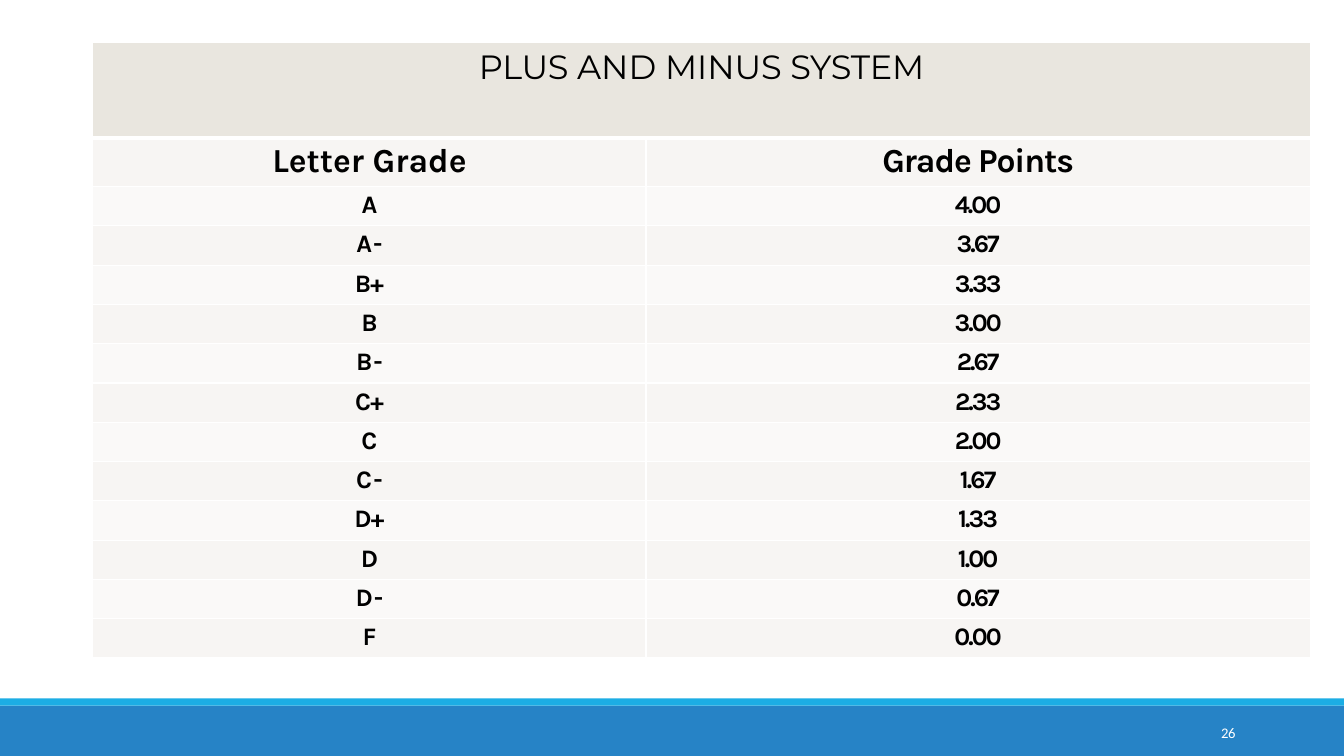
"""Build the slide that lists letter grades and their grade points."""
from lxml.etree import SubElement
from pptx import Presentation
from pptx.dml.color import RGBColor
from pptx.enum.shapes import MSO_SHAPE
from pptx.enum.text import MSO_ANCHOR, PP_ALIGN
from pptx.oxml.ns import qn
from pptx.util import Cm, Pt

TITLE = [("PLUS ", -0.2), ("AND MINUS", 0), (" SYSTEM", -0.2)]
HEADINGS = [
    [("L", -0.2), ("et", 0), ("t", -0.2), ("er ", 0), ("G", -0.1), ("r", -0.2), ("ade", 0)],
    [("Grade Points", -0.8)],
]
GRADES = [
    ("A", "4.00"), ("A-", "3.67"), ("B+", "3.33"), ("B", "3.00"),
    ("B-", "2.67"), ("C+", "2.33"), ("C", "2.00"), ("C-", "1.67"),
    ("D+", "1.33"), ("D", "1.00"), ("D-", "0.67"), ("F", "0.00"),
]
PAGE_NUMBER = "26"
SIGN_SPACING = {"+": -0.5, "-": 0.8}
POINTS_SPACING = -1.4

THEME = {
    "title": {"name": "Montserrat", "size": Pt(24), "bold": False, "color": "000000"},
    "heading": {"name": "Karla", "size": Pt(24), "bold": True, "color": "000000"},
    "grade": {"name": "Karla", "size": Pt(18), "bold": True, "color": "000000"},
    "number": {"name": "Calibri", "size": Pt(10.5), "bold": False, "color": "FFFFFF"},
    "title_fill": "E9E6DF",
    "bands": ("F7F5F3", "FAF9F8"),
    "rule": "FFFFFF",
    "footer": "2683C6",
    "stripe": "1CADE4",
}

PAGE_WIDTH, PAGE_HEIGHT = 33.87, 19.05
FOOTER_HEIGHT, STRIPE_HEIGHT = 1.27, 0.18
TABLE_LEFT, TABLE_TOP = 2.34, 1.07
COLUMN_WIDTHS = (13.94, 16.74)
ROW_HEIGHTS = [2.41, 1.22] + [0.99] * len(GRADES)


def write(frame, spans, style, align, space_before):
    """Fill the first paragraph with (text, letter spacing) spans."""
    para = frame.paragraphs[0]
    para.alignment = align
    para.space_before = Pt(space_before)
    for text, spacing in spans:
        span = para.add_run()
        span.text = text
        for name, value in THEME[style].items():
            if name == "color":
                span.font.color.rgb = RGBColor.from_string(value)
            else:
                setattr(span.font, name, value)
        span._r.get_or_add_rPr().set("spc", str(round(spacing * 100)))


def set_margins(target, top):
    """Leave only a top margin."""
    margins = {"left": 0, "top": Cm(top), "right": 0, "bottom": 0}
    for side, value in margins.items():
        setattr(target, f"margin_{side}", value)


def style_cell(cell, fill, top_rule, bottom_rule):
    """Give a cell its rules, fill and margins."""
    properties = cell._tc.get_or_add_tcPr()
    for side, width in {"L": 1, "R": 1, "T": top_rule, "B": bottom_rule}.items():
        line = SubElement(properties, qn(f"a:ln{side}"), w=str(Pt(width)))
        SubElement(SubElement(line, qn("a:solidFill")), qn("a:srgbClr"), val=THEME["rule"])
    cell.fill.solid()
    cell.fill.fore_color.rgb = RGBColor.from_string(fill)
    set_margins(cell, 0.1)


def add_bar(page, top, height, color):
    """Add a bar over the full width."""
    bar = page.shapes.add_shape(MSO_SHAPE.RECTANGLE, 0, Cm(top), Cm(PAGE_WIDTH), Cm(height))
    bar.shadow.inherit = False
    bar.fill.solid()
    bar.fill.fore_color.rgb = RGBColor.from_string(THEME[color])
    bar.line.fill.background()


def add_grade_table(page):
    """Add the title row, the headings and the grades."""
    grid = page.shapes.add_table(
        len(ROW_HEIGHTS), len(COLUMN_WIDTHS), Cm(TABLE_LEFT), Cm(TABLE_TOP),
        Cm(sum(COLUMN_WIDTHS)), Cm(sum(ROW_HEIGHTS)),
    ).table
    grid.first_row = grid.horz_banding = False
    for column, width in zip(grid.columns, COLUMN_WIDTHS):
        column.width = Cm(width)
    for index, (row, height) in enumerate(zip(grid.rows, ROW_HEIGHTS)):
        row.height = Cm(height)
        fill = THEME["bands"][(index - 1) % 2] if index else THEME["title_fill"]
        for cell in row.cells:
            style_cell(cell, fill, 3 if index == 1 else 1, 3 if index == 0 else 1)

    title = grid.cell(0, 0)
    title.merge(grid.cell(0, 1))
    write(title.text_frame, TITLE, "title", PP_ALIGN.CENTER, 2)
    for column, spans in enumerate(HEADINGS):
        write(grid.cell(1, column).text_frame, spans, "heading", PP_ALIGN.CENTER, 2.5)
    for row, (letter, points) in enumerate(GRADES, start=2):
        spans = [(letter, SIGN_SPACING.get(letter[-1], 0)), (points, POINTS_SPACING)]
        for column, span in enumerate(spans):
            write(grid.cell(row, column).text_frame, [span], "grade", PP_ALIGN.CENTER, 2.8)


def add_page_number(page):
    """Add the page number over the footer."""
    box = page.shapes.add_textbox(Cm(27.51), Cm(17.93), Cm(3.63), Cm(1.02))
    frame = box.text_frame
    frame.word_wrap = True
    frame.vertical_anchor = MSO_ANCHOR.MIDDLE
    set_margins(frame, 0.03)
    write(frame, [(PAGE_NUMBER, -0.1)], "number", PP_ALIGN.RIGHT, 0.6)


def main():
    """Build and save the deck."""
    deck = Presentation()
    deck.slide_width, deck.slide_height = Cm(PAGE_WIDTH), Cm(PAGE_HEIGHT)
    page = deck.slides.add_slide(deck.slide_layouts[6])
    footer_top = PAGE_HEIGHT - FOOTER_HEIGHT
    add_bar(page, footer_top, FOOTER_HEIGHT, "footer")
    add_bar(page, footer_top - STRIPE_HEIGHT, STRIPE_HEIGHT, "stripe")
    add_grade_table(page)
    add_page_number(page)
    deck.save("out.pptx")


if __name__ == "__main__":
    main()
